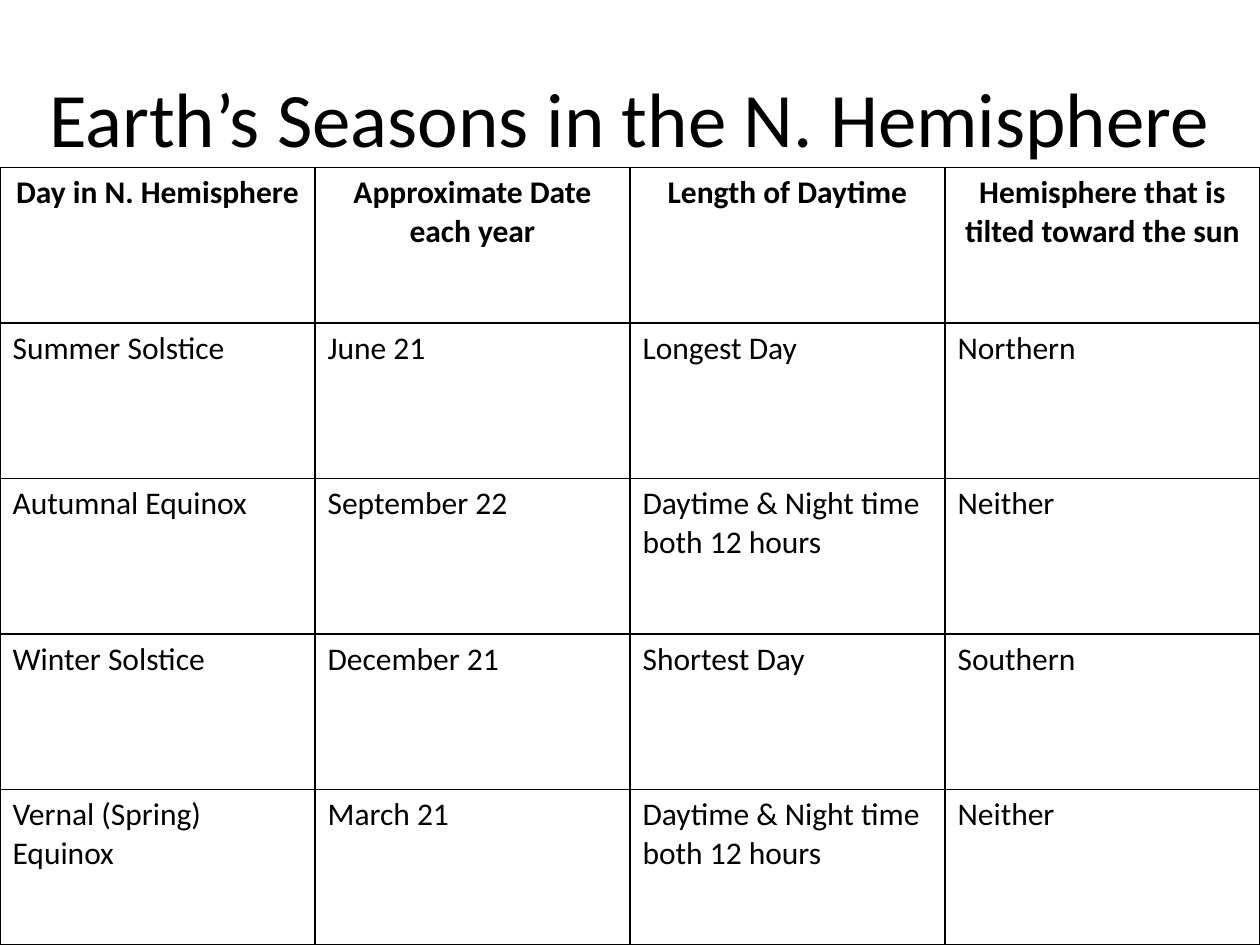
from lxml.etree import SubElement
from pptx import Presentation
from pptx.dml.color import RGBColor
from pptx.enum.text import MSO_ANCHOR as Anchor, PP_ALIGN as Align
from pptx.oxml.ns import qn
from pptx.util import Inches, Pt

FONT = "Calibri"
BLACK = "000000"
WHITE = "FFFFFF"

TITLE = "Earth’s Seasons in the N. Hemisphere"
SEASONS = [
    ("Day in N. Hemisphere", "Approximate Date each year",
     "Length of Daytime", "Hemisphere that is tilted toward the sun"),
    ("Summer Solstice", "June 21", "Longest Day", "Northern"),
    ("Autumnal Equinox", "September 22",
     "Daytime & Night time both 12 hours", "Neither"),
    ("Winter Solstice", "December 21", "Shortest Day", "Southern"),
    ("Vernal (Spring) Equinox", "March 21",
     "Daytime & Night time both 12 hours", "Neither"),
]


def color(hex_code):
    return RGBColor.from_string(hex_code)


def write(frame, text, size, align, bold=False):
    paragraph = frame.paragraphs[0]
    paragraph.text = text
    paragraph.alignment = align
    font = paragraph.font
    font.name, font.size, font.bold = FONT, Pt(size), bold
    font.color.rgb = color(BLACK)


def add_title(slide, text):
    title = slide.shapes.add_textbox(Inches(0), Inches(0.3), Inches(10), Inches(1.25))
    frame = title.text_frame
    frame.word_wrap = True
    frame.vertical_anchor = Anchor.MIDDLE
    write(frame, text, 44, Align.CENTER)


def add_borders(cell, hex_code, width):
    properties = cell._tc.get_or_add_tcPr()
    for side in ("a:lnL", "a:lnR", "a:lnT", "a:lnB"):
        line = SubElement(properties, qn(side), w=str(Pt(width)))
        fill = SubElement(line, qn("a:solidFill"))
        SubElement(fill, qn("a:srgbClr"), val=hex_code)


def add_season_table(slide, rows):
    table = slide.shapes.add_table(
        len(rows), len(rows[0]),
        Inches(0), Inches(1.33), Inches(10), Inches(6.17)).table
    for row_index, row in enumerate(rows):
        is_header = row_index == 0
        align = Align.CENTER if is_header else Align.LEFT
        for column_index, text in enumerate(row):
            cell = table.cell(row_index, column_index)
            write(cell.text_frame, text, 18, align, bold=is_header)
            # The schema wants borders ahead of the fill.
            add_borders(cell, BLACK, 1)
            cell.fill.solid()
            cell.fill.fore_color.rgb = color(WHITE)


def main():
    deck = Presentation()
    deck.slide_width, deck.slide_height = Inches(10), Inches(7.5)
    slide = deck.slides.add_slide(deck.slide_layouts[6])
    add_title(slide, TITLE)
    add_season_table(slide, SEASONS)
    deck.save("out.pptx")


if __name__ == "__main__":
    main()
